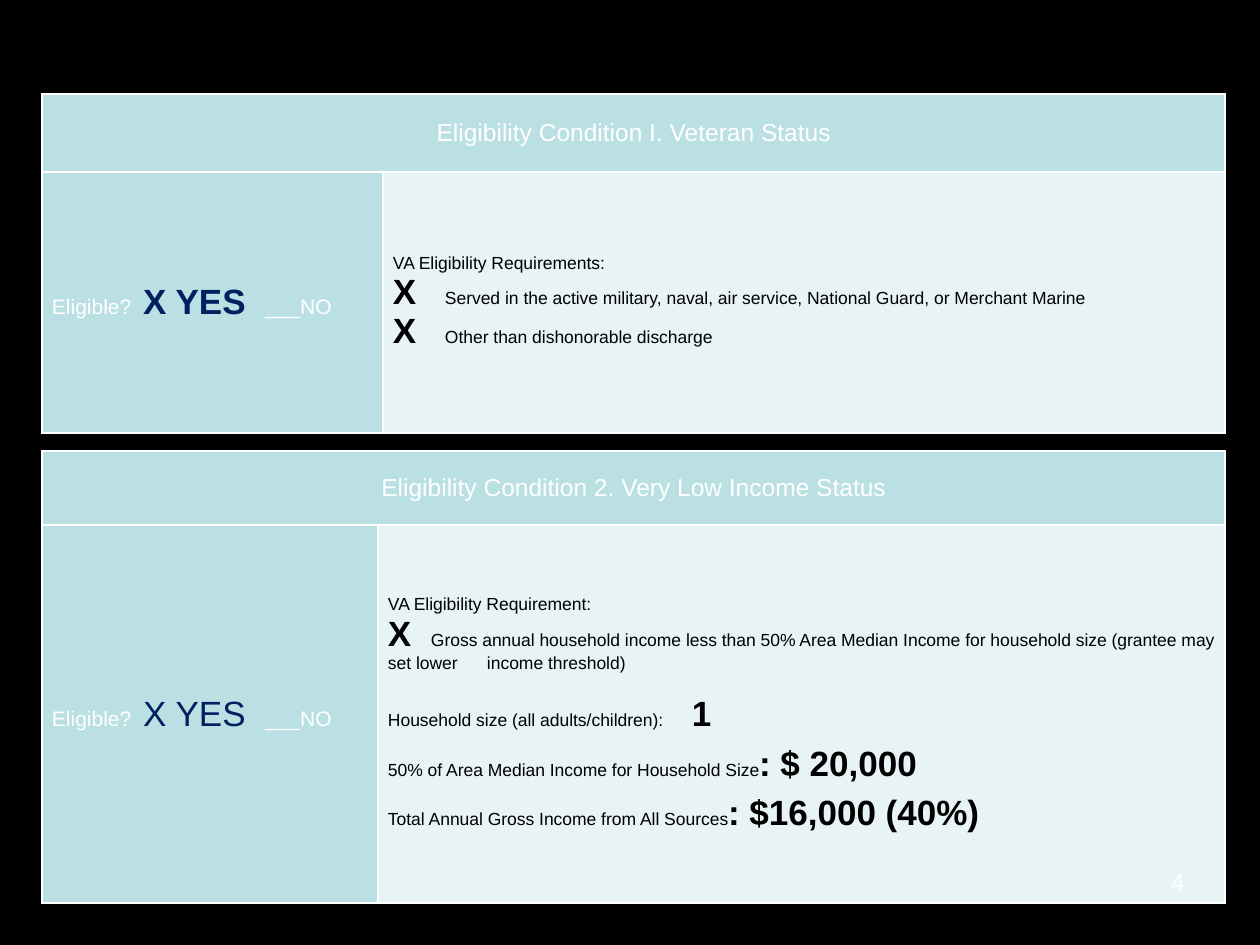
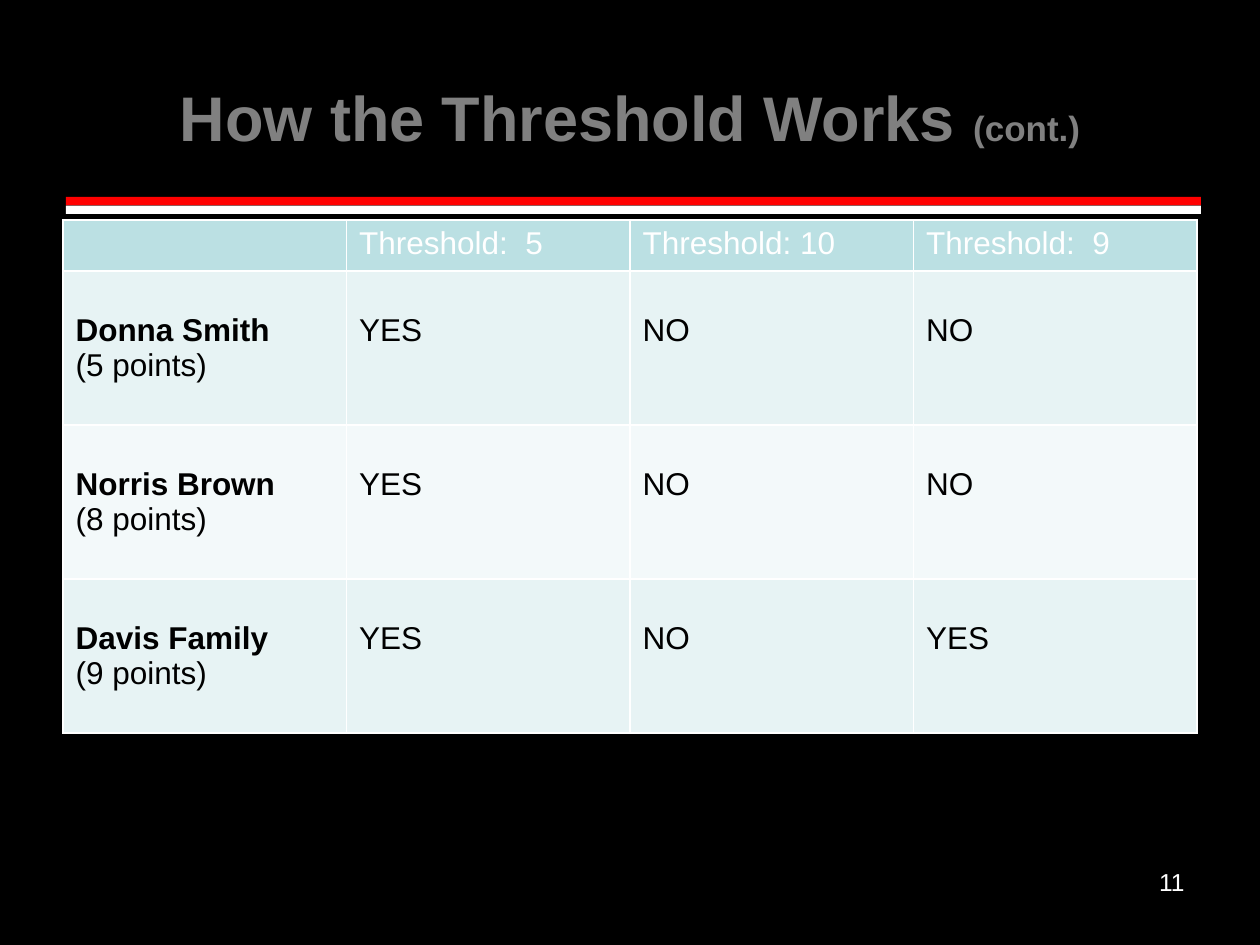
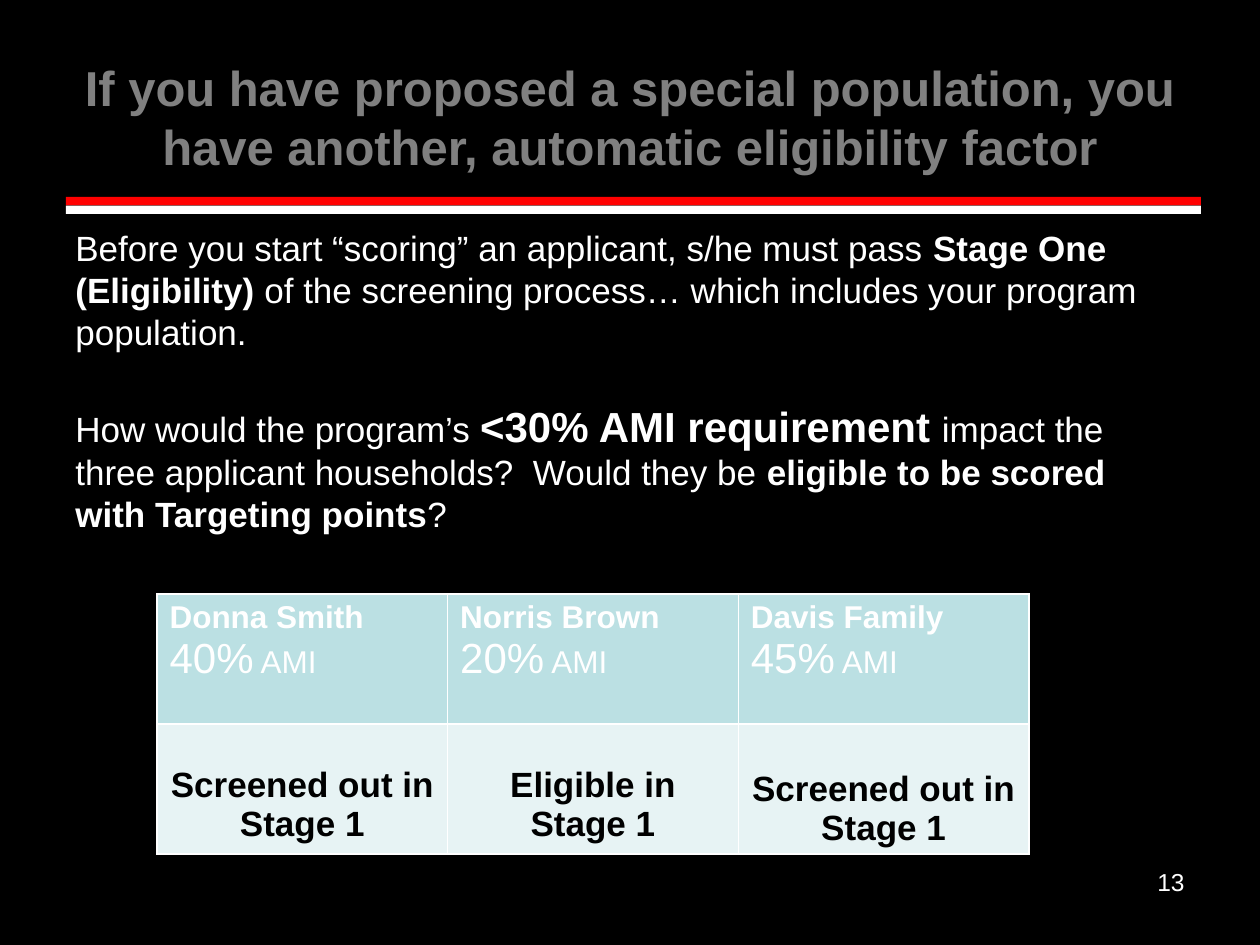
from lxml.etree import SubElement
from pptx import Presentation
from pptx.dml.color import RGBColor
from pptx.enum.shapes import MSO_SHAPE
from pptx.enum.text import MSO_ANCHOR, MSO_AUTO_SIZE, PP_ALIGN
from pptx.oxml import parse_xml
from pptx.oxml.ns import qn
from pptx.util import Emu, Pt

EMU_PER_PX = 914400 / 126
FONT = "Arial"
BLACK, WHITE, RED, GREY, NAVY = "000000", "FFFFFF", "FF0000", "808080", "002060"
TEAL, PALE, PALER = "BBE0E3", "E7F3F4", "F3F9FA"
TITLE_BOX = (63, 38, 1134, 157)
BAND_BOX = (66, 197, 1135, 17)
NUMBER_BOX = (903, 861, 294, 66)
DRAWING_NS = "http://schemas.openxmlformats.org/drawingml/2006/main"


def px(length):
    return Emu(round(length * EMU_PER_PX))


def color(hex_code):
    return RGBColor.from_string(hex_code)


def write(frame, *paragraphs, align=PP_ALIGN.LEFT, before=None, after=None,
          tabs=(), size=18, ink=BLACK, bold=False):
    for index, runs in enumerate(paragraphs):
        paragraph = frame.paragraphs[0] if index == 0 else frame.add_paragraph()
        paragraph.alignment = align
        paragraph.space_before = Pt((before or {}).get(index, 0))
        paragraph.space_after = Pt((after or {}).get(index, 0))
        if tabs:
            stops = SubElement(paragraph._p.get_or_add_pPr(), qn("a:tabLst"))
            for stop in tabs:
                SubElement(stops, qn("a:tab"), pos=str(px(stop)), algn="l")
        for words, changes in [(runs, {})] if isinstance(runs, str) else runs:
            look = {"size": size, "ink": ink, "bold": bold, **changes}
            run = paragraph.add_run()
            run.text = words
            run.font.name = FONT
            run.font.size = Pt(look["size"])
            run.font.bold = look["bold"]
            run.font.color.rgb = color(look["ink"])


def add_text(slide, box, *paragraphs, **look):
    frame = slide.shapes.add_textbox(*map(px, box)).text_frame
    frame.word_wrap = True
    write(frame, *paragraphs, **look)


def add_number(slide, number):
    add_text(slide, NUMBER_BOX, number, align=PP_ALIGN.RIGHT, size=14, ink=WHITE)


def move_bands_to_master(slide, master, box):
    left, top, width, height = box
    for row, fill in enumerate((RED, WHITE)):
        band = slide.shapes.add_shape(
            MSO_SHAPE.RECTANGLE, px(left), px(top + row * height / 2),
            px(width), px(height / 2))
        band.shadow.inherit = False
        band.fill.solid()
        band.fill.fore_color.rgb = color(fill)
        band.line.fill.background()
        master.shapes._spTree.append(band._element)


def add_titled_slide(deck, number, size, *title):
    slide = deck.slides.add_slide(deck.slide_layouts[5])
    heading = slide.shapes.title
    heading.left, heading.top, heading.width, heading.height = map(px, TITLE_BOX)
    heading.text_frame.auto_size = MSO_AUTO_SIZE.NONE
    heading.text_frame.vertical_anchor = MSO_ANCHOR.MIDDLE
    write(heading.text_frame, *title, align=PP_ALIGN.CENTER, size=size,
          ink=GREY, bold=True)
    add_number(slide, number)
    return slide


def add_grid(slide, left, top, widths, heights, fills):
    table = slide.shapes.add_table(
        len(heights), len(widths), px(left), px(top),
        px(sum(widths)), px(sum(heights))).table
    for column, width in zip(table.columns, widths):
        column.width = px(width)
    for row, height, fill in zip(table.rows, heights, fills):
        row.height = px(height)
        for cell in row.cells:
            cell.fill.solid()
            cell.fill.fore_color.rgb = color(fill)
            for place, side in enumerate("LRTB"):
                cell._tc.get_or_add_tcPr().insert(place, parse_xml(
                    f'<a:ln{side} xmlns:a="{DRAWING_NS}" w="12700"><a:solidFill>'
                    f'<a:srgbClr val="{WHITE}"/></a:solidFill></a:ln{side}>'))
    return table


def add_condition(slide, top, widths, heights, heading, yes_bold, requirements, **look):
    table = add_grid(slide, 42, top, widths, heights, (TEAL, TEAL))
    header, answer, details = table.cell(0, 0), table.cell(1, 0), table.cell(1, 1)
    header.merge(table.cell(0, 1))
    details.fill.fore_color.rgb = color(PALE)
    for cell in (header, answer, details):
        cell.vertical_anchor = MSO_ANCHOR.MIDDLE
        cell.margin_left, cell.margin_right = px(10), px(9)
        cell.margin_top = cell.margin_bottom = 0
    write(header.text_frame, heading, align=PP_ALIGN.CENTER, size=14, ink=WHITE)
    write(answer.text_frame,
          [("Eligible?  ", {}),
           ("X YES  ", {"size": 20, "ink": NAVY, "bold": yes_bold}),
           ("___NO", {})], size=12, ink=WHITE)
    write(details.text_frame, *requirements, size=10, **look)


def build_eligibility(deck):
    slide = deck.slides.add_slide(deck.slide_layouts[6])
    move_bands_to_master(slide, deck.slide_master, BAND_BOX)
    strong = {"size": 20, "bold": True}
    add_condition(
        slide, 94, (341, 842), (78, 261),
        "Eligibility Condition I. Veteran Status", True,
        ["VA Eligibility Requirements:",
         [("X", strong), ("\tServed in the active military, naval, air service, "
                          "National Guard, or Merchant Marine", {})],
         [("X", strong), ("\tOther than dishonorable discharge", {})]],
        tabs=(52,))
    add_condition(
        slide, 451, (336, 847), (74, 378),
        "Eligibility Condition 2. Very Low Income Status", False,
        ["VA Eligibility Requirement:",
         [("X", strong), ("\tGross annual household income less than 50% Area Median "
                          "Income for household size (grantee may set lower\t"
                          "income threshold)", {})],
         [("Household size (all adults/children):", {}), ("\t1", strong)],
         [("50% of Area Median Income for Household Size", {}),
          (": $ 20,000", strong)],
         [("Total Annual Gross Income from All Sources", {}),
          (": $16,000 (40%)", strong)]],
        tabs=(43, 99, 304), before={2: 12.6}, after={2: 6, 3: 6})
    add_number(slide, "4")


def build_threshold(deck):
    slide = add_titled_slide(
        deck, "11", 36, [("How the Threshold Works ", {}), ("(cont.)", {"size": 20})])
    table = add_grid(slide, 63, 220, [1134 / 4] * 4, (51, 154, 154, 154),
                     (TEAL, PALE, PALER, PALE))
    for column, threshold in enumerate(
            ("Threshold:  5", "Threshold: 10", "Threshold:  9"), 1):
        write(table.cell(0, column).text_frame, threshold, ink=WHITE)
    households = (
        ("Donna Smith", "(5 points)", "YES", "NO", "NO"),
        ("Norris Brown", "(8 points)", "YES", "NO", "NO"),
        ("Davis Family", "(9 points)", "YES", "NO", "YES"))
    for row, (name, points, *answers) in enumerate(households, 1):
        write(table.cell(row, 0).text_frame, [(name, {"bold": True})], points)
        for column, answer in enumerate(answers, 1):
            write(table.cell(row, column).text_frame, answer)
        for column in range(4):
            table.cell(row, column).margin_top = px(42)


def build_special_population(deck):
    slide = add_titled_slide(
        deck, "13", 28, "If you have proposed a special population, you have another, "
                        "automatic eligibility factor")
    strong = {"bold": True}
    add_text(
        slide, (63, 220, 1134, 330),
        [("Before you start “scoring” an applicant, s/he must pass ", {}),
         ("Stage One (Eligibility) ", strong),
         ("of the screening process… which includes your program population.", {})],
        [("How would the program’s ", {}),
         ("<30% AMI requirement ", {"size": 24, "bold": True}),
         ("impact the three applicant households?  Would they be ", {}),
         ("eligible to be scored with Targeting points", strong), ("?", {})],
        size=20, ink=WHITE, before={1: 27.6})
    table = add_grid(slide, 157, 594, [872 / 3] * 3, (130, 130), (TEAL, PALE))
    households = (
        ("Donna Smith", "40%", "Screened out in Stage 1", 42),
        ("Norris Brown", "20%", "Eligible in Stage 1", 42),
        ("Davis Family", "45%", "Screened out in Stage 1", 46))
    for column, (name, income, outcome, inset) in enumerate(households):
        write(table.cell(0, column).text_frame, [(name, strong)],
              [(income, {"size": 24}), (" AMI", {})], ink=WHITE)
        result = table.cell(1, column)
        result.margin_top, result.margin_bottom = px(inset), 0
        write(result.text_frame, outcome, align=PP_ALIGN.CENTER, size=20, bold=True)


def main():
    deck = Presentation()
    deck.slide_width, deck.slide_height = px(1260), px(945)
    backdrop = deck.slide_master.background.fill
    backdrop.solid()
    backdrop.fore_color.rgb = color(BLACK)
    build_eligibility(deck)
    build_threshold(deck)
    build_special_population(deck)
    deck.save("out.pptx")


if __name__ == "__main__":
    main()
